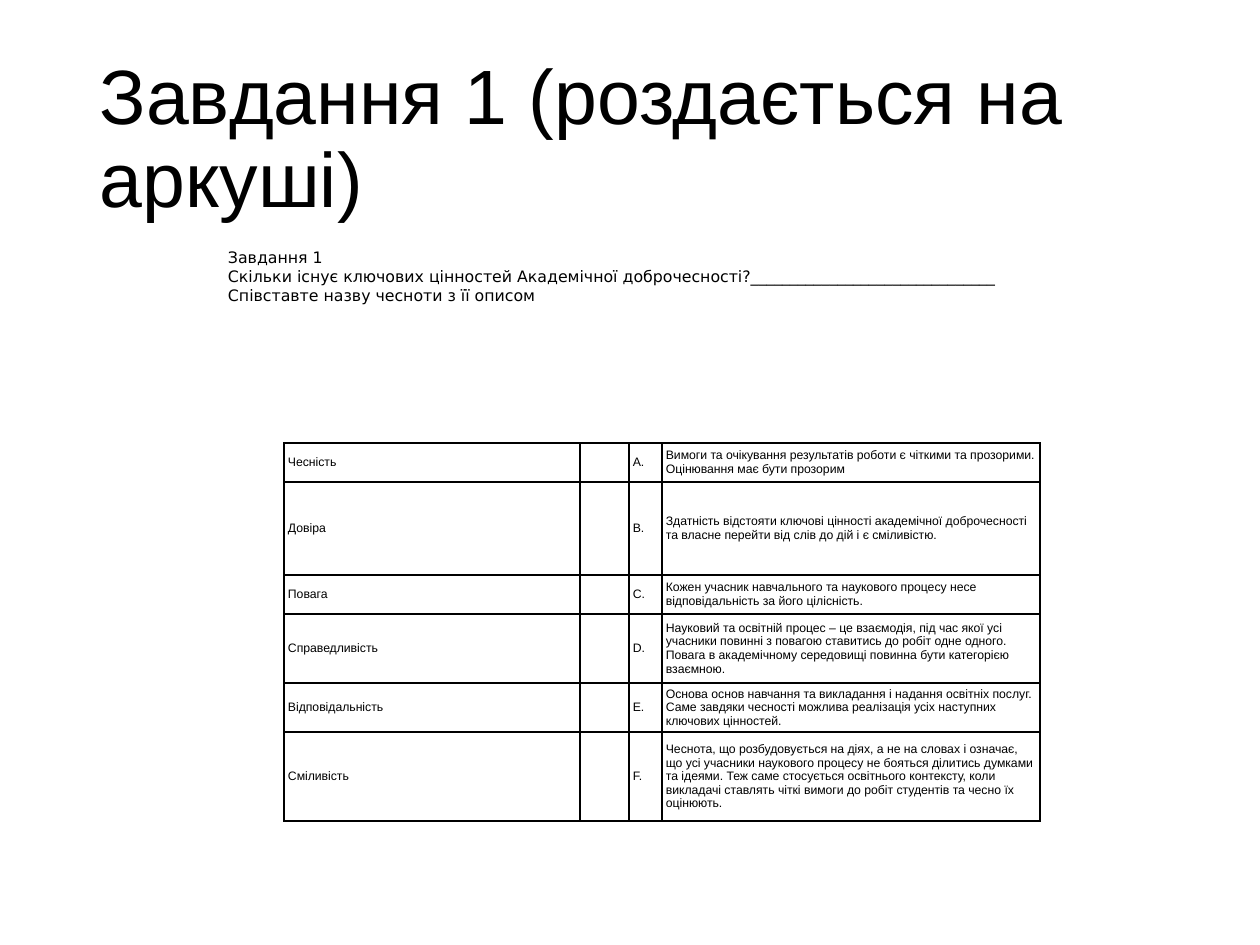
import pptx
import pptx.util
import pptx.dml.color
import pptx.enum.shapes
import pptx.enum.text
import lxml.etree
import pptx.oxml.ns

BLACK = pptx.dml.color.RGBColor(0, 0, 0)
WHITE = pptx.dml.color.RGBColor(255, 255, 255)
PX_PER_INCH = 126
MIDDLE = pptx.enum.text.MSO_ANCHOR.MIDDLE
TOP = pptx.enum.text.MSO_ANCHOR.TOP

TITLE = "Завдання 1 (роздається на аркуші)"
INSTRUCTIONS = [
    "Завдання 1",
    "Скільки існує ключових цінностей Академічної доброчесності?" + "_" * 31,
    "Співставте назву чесноти з її описом",
]
COLUMN_WIDTHS = [296, 49, 33, 378]
ROW_HEIGHTS = [39, 93, 39, 69, 49, 89]
VALUES = [
    ("Чесність", "", "А.",
     "Вимоги та очікування результатів роботи є чіткими та прозорими. "
     "Оцінювання має бути прозорим"),
    ("Довіра", "", "B.",
     "Здатність відстояти ключові цінності академічної доброчесності "
     "та власне перейти від слів до дій і є сміливістю."),
    ("Повага", "", "C.",
     "Кожен учасник навчального та наукового процесу несе "
     "відповідальність за його цілісність."),
    ("Справедливість", "", "D.",
     "Науковий та освітній процес – це взаємодія, під час якої усі "
     "учасники повинні з повагою ставитись до робіт одне одного. "
     "Повага в академічному середовищі повинна бути категорією взаємною."),
    ("Відповідальність", "", "E.",
     "Основа основ навчання та викладання і надання освітніх послуг. "
     "Саме завдяки чесності можлива реалізація усіх наступних ключових цінностей."),
    ("Сміливість", "", "F.",
     "Чеснота, що розбудовується на діях, а не на словах і означає, "
     "що усі учасники наукового процесу не бояться ділитись думками та ідеями. "
     "Теж саме стосується освітнього контексту, коли викладачі ставлять чіткі "
     "вимоги до робіт студентів та чесно їх оцінюють."),
]


def px(length):
    return pptx.util.Emu(round(length * 914400 / PX_PER_INCH))


class SlideBuilder:
    def __init__(self, slide, font="Arial", color=BLACK, fill=WHITE, border=1):
        self.slide = slide
        self.font = font
        self.color = color
        self.fill = fill
        self.border = border

    def format_text(self, text_frame, size, font=None, line_spacing=None):
        for paragraph in text_frame.paragraphs:
            paragraph.alignment = pptx.enum.text.PP_ALIGN.LEFT
            paragraph.line_spacing = line_spacing
            for run in paragraph.runs:
                run.font.size = pptx.util.Pt(size)
                run.font.name = font or self.font
                run.font.color.rgb = self.color

    def set_margins(self, target, side):
        target.margin_left = target.margin_right = px(side)
        target.margin_top = target.margin_bottom = 0

    def title(self, text, left, top, width, height, size):
        shape = self.slide.shapes.title
        shape.left, shape.top = px(left), px(top)
        shape.width, shape.height = px(width), px(height)
        text_frame = shape.text_frame
        text_frame.text = text
        text_frame.word_wrap = True
        text_frame.auto_size = pptx.enum.text.MSO_AUTO_SIZE.NONE
        text_frame.vertical_anchor = MIDDLE
        self.format_text(text_frame, size, line_spacing=0.9)

    def text_block(self, lines, left, top, width, height, size, font):
        shape = self.slide.shapes.add_shape(
            pptx.enum.shapes.MSO_SHAPE.RECTANGLE,
            px(left), px(top), px(width), px(height))
        shape.shadow.inherit = False
        shape.fill.solid()
        shape.fill.fore_color.rgb = self.fill
        shape.line.fill.background()
        text_frame = shape.text_frame
        text_frame.text = "\n".join(lines)
        text_frame.word_wrap = True
        text_frame.vertical_anchor = TOP
        self.set_margins(text_frame, 9)
        self.format_text(text_frame, size, font)

    def cell_borders(self, cell):
        properties = cell._tc.get_or_add_tcPr()
        for side in ("L", "R", "T", "B"):
            line = lxml.etree.SubElement(
                properties, pptx.oxml.ns.qn(f"a:ln{side}"),
                w=str(pptx.util.Pt(self.border)))
            solid = lxml.etree.SubElement(line, pptx.oxml.ns.qn("a:solidFill"))
            lxml.etree.SubElement(
                solid, pptx.oxml.ns.qn("a:srgbClr"), val=str(self.color))

    def table(self, rows, left, top, column_widths, row_heights, size):
        table = self.slide.shapes.add_table(
            len(row_heights), len(column_widths), px(left), px(top),
            px(sum(column_widths)), px(sum(row_heights))).table
        table.first_row = table.horz_banding = False
        for column, width in zip(table.columns, column_widths):
            column.width = px(width)
        for row, height, texts in zip(table.rows, row_heights, rows):
            row.height = px(height)
            for cell, text in zip(row.cells, texts):
                self.cell_borders(cell)
                cell.fill.solid()
                cell.fill.fore_color.rgb = self.fill
                cell.vertical_anchor = MIDDLE
                self.set_margins(cell, 4)
                if text:
                    cell.text_frame.text = text
                    self.format_text(cell.text_frame, size)


def main():
    presentation = pptx.Presentation()
    presentation.slide_width = px(1260)
    presentation.slide_height = px(945)
    slide = presentation.slides.add_slide(presentation.slide_layouts[5])
    builder = SlideBuilder(slide)
    builder.title(TITLE, 87, 50, 1086, 183, size=44)
    builder.table(VALUES, 284, 443, COLUMN_WIDTHS, ROW_HEIGHTS, size=7)
    builder.text_block(INSTRUCTIONS, 219, 248, 1189, 152, size=9, font="DejaVu Sans")
    presentation.save("out.pptx")


if __name__ == "__main__":
    main()
